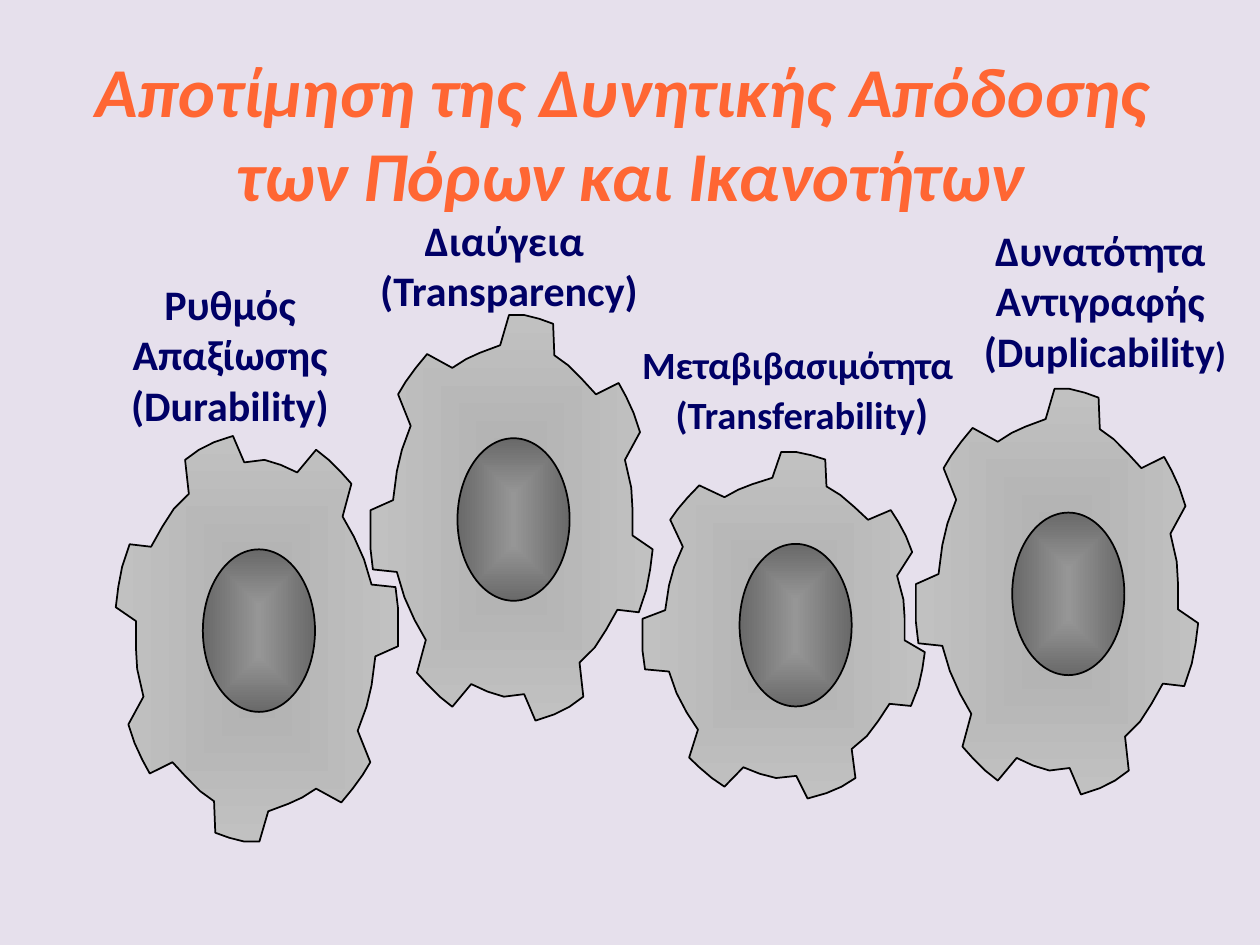
from dataclasses import dataclass

from pptx import Presentation
from pptx.dml.color import RGBColor
from pptx.enum.shapes import MSO_SHAPE
from pptx.enum.text import MSO_ANCHOR, MSO_AUTO_SIZE, PP_ALIGN
from pptx.oxml import parse_xml
from pptx.oxml.ns import nsdecls, qn
from pptx.util import Pt

FONT = "Calibri"
NAVY, ORANGE, BLACK = "000066", "FF6633", "000000"
UNIT_W, UNIT_H = 224, 322
RIM = [
    (110, 0), (122, 0), (134, 3), (145, 7), (146, 32), (157, 40), (168, 51),
    (179, 63), (197, 54), (203, 65), (209, 78), (214, 93), (202, 115),
    (207, 137), (208, 154), (208, 175), (224, 186), (222, 202), (219, 218),
    (213, 236), (196, 234), (187, 250), (178, 264), (166, 276), (169, 303),
    (158, 311), (146, 317), (131, 322), (122, 301), (106, 303), (93, 299),
    (80, 293), (65, 311), (55, 303), (45, 293), (37, 284), (44, 258),
    (35, 242), (27, 224), (21, 204), (2, 202), (0, 185), (0, 172), (0, 155),
    (18, 147), (21, 124), (25, 107), (32, 88), (22, 63), (28, 53), (36, 42),
    (45, 31), (65, 42), (76, 35), (87, 30), (103, 24),
]


@dataclass
class Gear:
    left: float
    top: float
    hub_x: float
    hub_y: float
    height: float = 231.8
    turned: bool = False


@dataclass
class Label:
    left: float
    top: float
    width: float
    height: float
    lines: list[str]
    size: float = 24
    end_size: float = 24  # size of the closing bracket
    wrap: bool = False


GEARS = [
    Gear(211.7, 180, 261.4, 250.4),
    Gear(66.2, 249.1, 115.9, 313.9, turned=True),
    Gear(367.2, 258.3, 422.6, 310.8, height=198),
    Gear(523.4, 222.2, 578.4, 292.9),
]
LABELS = [
    Label(52.6, 155.5, 157.7, 93.6, ["Ρυθμός Απαξίωσης (Durability)"], wrap=True),
    Label(203.8, 118.8, 174.2, 64.8, ["Διαύγεια ", "(Transparency)"]),
    Label(357.1, 191.5, 202.3, 62.6, ["Μεταβιβασιμότητα ", "(Transferability)"], size=22),
    Label(550.1, 124.6, 162.7, 93.6,
          ["Δυνατότητα ", "Αντιγραφής ", "(Duplicability)"], end_size=20),
]


def color(code: str) -> RGBColor:
    return RGBColor.from_string(code)


def paint(shape, inner: str, outer: str, kind: str) -> None:
    """Give a gradient from the centre outwards and a thin black line."""
    shape.shadow.inherit = False
    shape.fill.gradient()
    for stop, code in zip(shape.fill.gradient_stops, (inner, outer)):
        stop.color.rgb = color(code)
    grad = shape._element.spPr.find(qn("a:gradFill"))
    grad.replace(grad.find(qn("a:lin")), parse_xml(
        f'<a:path {nsdecls("a")} path="{kind}">'
        '<a:fillToRect l="50000" t="50000" r="50000" b="50000"/></a:path>'))
    shape.line.color.rgb = color(BLACK)
    shape.line.width = Pt(1)


def draw_gear(shapes, gear: Gear) -> None:
    rim = [(UNIT_W - x, UNIT_H - y) for x, y in RIM] if gear.turned else RIM
    scale = (Pt(161.3) / UNIT_W, Pt(gear.height) / UNIT_H)
    pen = shapes.build_freeform(*rim[0], scale=scale)
    pen.add_line_segments(rim[1:], close=True)
    wheel = pen.convert_to_shape(Pt(gear.left), Pt(gear.top))
    paint(wheel, "B2B2B2", "C1C1C1", "rect")
    hub = shapes.add_shape(MSO_SHAPE.OVAL, Pt(gear.hub_x), Pt(gear.hub_y),
                           Pt(64.1), Pt(92.9))
    paint(hub, "969696", "696969", "shape")


def style(run, size: float, code: str, italic: bool = False) -> None:
    font = run.font
    font.name, font.size, font.bold, font.italic = FONT, Pt(size), True, italic
    font.color.rgb = color(code)


def draw_label(shapes, label: Label) -> None:
    box = shapes.add_textbox(Pt(label.left), Pt(label.top),
                             Pt(label.width), Pt(label.height))
    frame = box.text_frame
    frame.word_wrap = label.wrap
    frame.auto_size = MSO_AUTO_SIZE.SHAPE_TO_FIT_TEXT
    split = label.end_size != label.size
    text = "\n".join(label.lines)
    frame.text = text.removesuffix(")") if split else text
    for para in frame.paragraphs:
        para.alignment = PP_ALIGN.CENTER
        for run in para.runs:
            style(run, label.size, NAVY)
    if split:
        end = frame.paragraphs[-1].add_run()
        end.text = ")"
        style(end, label.end_size, NAVY)


def set_title(title) -> None:
    title.left, title.top = Pt(0), Pt(46.8)
    title.width, title.height = Pt(720), Pt(56.2)
    frame = title.text_frame
    frame.text = "Αποτίμηση της Δυνητικής Απόδοσης \nτων Πόρων και Ικανοτήτων"
    frame.auto_size = MSO_AUTO_SIZE.NONE
    frame.vertical_anchor = MSO_ANCHOR.MIDDLE
    for para in frame.paragraphs:
        para.alignment = PP_ALIGN.CENTER
        style(para.runs[0], 40, ORANGE, italic=True)


def main() -> None:
    deck = Presentation()
    deck.slide_width, deck.slide_height = Pt(720), Pt(540)
    slide = deck.slides.add_slide(deck.slide_layouts.get_by_name("Title Only"))
    back = slide.background.fill
    back.solid()
    back.fore_color.rgb = color("E6E0EC")
    set_title(slide.shapes.title)
    for gear in GEARS:
        draw_gear(slide.shapes, gear)
    for label in LABELS:
        draw_label(slide.shapes, label)
    deck.save("out.pptx")


if __name__ == "__main__":
    main()
